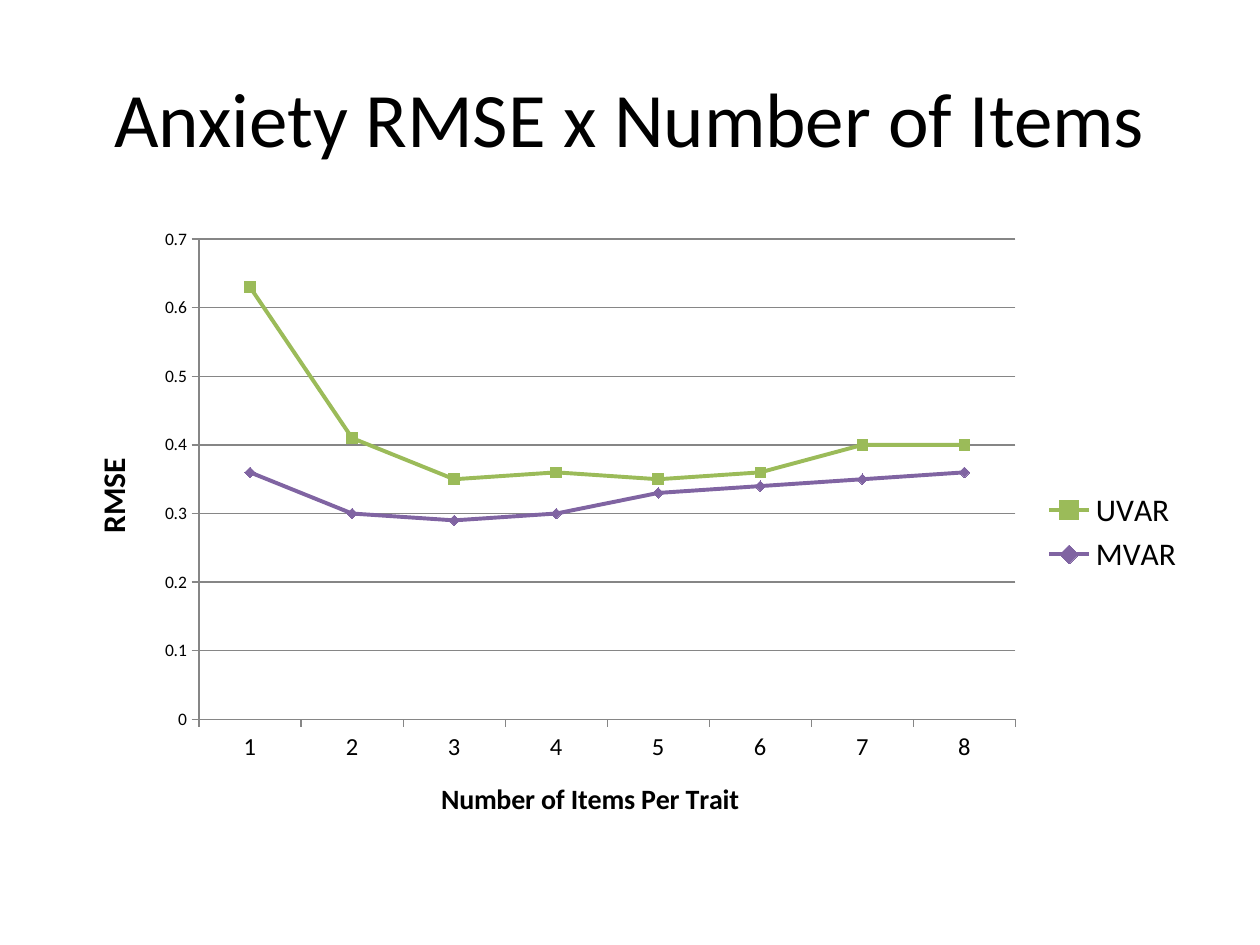
from lxml.etree import SubElement
from pptx import Presentation
from pptx.chart.data import CategoryChartData
from pptx.dml.color import RGBColor
from pptx.enum.chart import XL_CHART_TYPE as Chart, XL_LEGEND_POSITION as Legend
from pptx.enum.chart import XL_MARKER_STYLE as Marker, XL_TICK_MARK as Tick
from pptx.enum.text import MSO_ANCHOR as Anchor, PP_ALIGN as Align
from pptx.oxml.ns import qn
from pptx.util import Inches, Pt


def color(value):
    return RGBColor.from_string(value)


class Deck:
    """Style and current slide, laid out on a grid of 40 columns by 30 rows."""

    font, ink, grey = "Calibri", "000000", "868686"

    def __init__(self, prs):
        self.cell_w, self.cell_h = prs.slide_width / 40, prs.slide_height / 30
        self.s = prs.slides.add_slide(prs.slide_layouts[6])

    def box(self, col, row, cols, rows):
        return (round(col * self.cell_w), round(row * self.cell_h),
                round(cols * self.cell_w), round(rows * self.cell_h))

    def style(self, font, size, bold=False):
        font.name, font.size, font.bold = self.font, Pt(size), bold
        font.color.rgb = color(self.ink)

    def title(self, text, area, size):
        tf = self.s.shapes.add_textbox(*self.box(*area)).text_frame
        tf.word_wrap, tf.vertical_anchor = True, Anchor.MIDDLE
        p = tf.paragraphs[0]
        p.text, p.alignment = text, Align.CENTER
        self.style(p.font, size)

    def axis(self, axis, title, title_size, size):
        p = axis.axis_title.text_frame.paragraphs[0]
        p.text = title
        self.style(p.font, title_size, bold=True)
        self.style(axis.tick_labels.font, size)
        axis.major_tick_mark, axis.minor_tick_mark = Tick.OUTSIDE, Tick.NONE
        self.stroke(axis.format.line, self.grey, 0.75)

    def stroke(self, line, value, width):
        line.color.rgb, line.width = color(value), Pt(width)

    def plot_area(self, chart, **shares):
        area = chart.plots[0]._element.getparent()
        for old in area.findall(qn("c:layout")):
            area.remove(old)
        layout = SubElement(area, qn("c:layout"))
        area.insert(0, layout)
        manual = SubElement(layout, qn("c:manualLayout"))
        modes = dict(layoutTarget="inner", xMode="edge", yMode="edge")
        for tag, value in (modes | shares).items():
            SubElement(manual, qn(f"c:{tag}")).set("val", str(value))

    def line_chart(self, area, categories, series):
        data = CategoryChartData()
        data.categories = categories
        for name, values, *_ in series:
            data.add_series(name, values)
        chart = self.s.shapes.add_chart(
            Chart.LINE_MARKERS, *self.box(*area), data).chart
        self.style(chart.font, 10)
        chart.has_title = False
        chart.has_legend = True
        chart.legend.position = Legend.RIGHT
        chart.legend.include_in_layout = False
        self.style(chart.legend.font, 18)
        chart.plots[0].vary_by_categories = False
        for line, (_, _, value, marker) in zip(chart.plots[0].series, series):
            line.smooth = False
            self.stroke(line.format.line, value, 2.25)
            line.marker.style, line.marker.size = marker, 6
            line.marker.format.fill.solid()
            line.marker.format.fill.fore_color.rgb = color(value)
            self.stroke(line.marker.format.line, value, 0.75)
        return chart


def main():
    prs = Presentation()
    prs.slide_width, prs.slide_height = Inches(10), Inches(7.5)
    deck = Deck(prs)
    deck.title("Anxiety RMSE x Number of Items", (2, 1.2, 36, 5), 44)
    chart = deck.line_chart((2, 7, 36, 19.8), [str(n) for n in range(1, 9)], [
        ("UVAR", (0.63, 0.41, 0.35, 0.36, 0.35, 0.36, 0.4, 0.4), "9BBB59", Marker.SQUARE),
        ("MVAR", (0.36, 0.3, 0.29, 0.3, 0.33, 0.34, 0.35, 0.36), "8064A2", Marker.DIAMOND),
    ])
    deck.axis(chart.category_axis, "Number of Items Per Trait", 16, 14)
    values = chart.value_axis
    deck.axis(values, "RMSE", 18, 10)
    values.minimum_scale, values.maximum_scale, values.major_unit = 0, 0.7, 0.1
    values.tick_labels.number_format = "General"
    values.tick_labels.number_format_is_linked = False
    values.has_major_gridlines = True
    deck.stroke(values.major_gridlines.format.line, deck.grey, 0.75)
    deck.plot_area(chart, x=0.12, y=0.03, w=0.72, h=0.77)
    prs.save("out.pptx")


if __name__ == "__main__":
    main()
